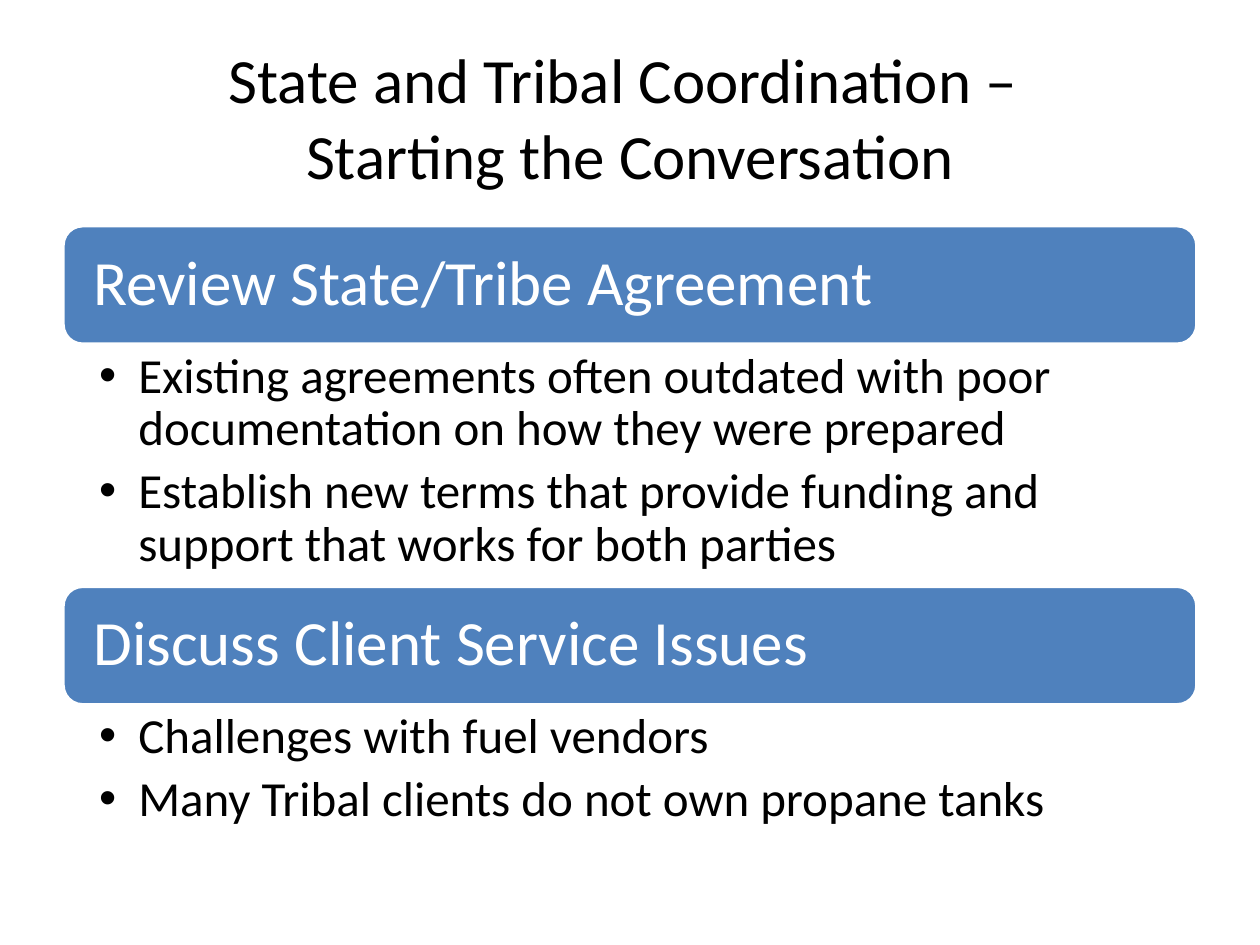
from lxml import etree
from pptx import Presentation
from pptx.dml.color import RGBColor
from pptx.enum import shapes, text
from pptx.oxml import ns
from pptx.util import Cm, Pt

FONT = "Calibri"
BLACK, WHITE, BLUE = "000000", "FFFFFF", "4F81BD"
LEFT, WIDTH = Cm(1.27), Cm(22.86)
BAR_HEIGHT = Cm(2.39)

# Heading, top of its bar, height of its list, list items
SECTIONS = [
    ("Review State/Tribe Agreement", Cm(4.55), Cm(4.88), [
        "Existing agreements often outdated with poor documentation on how they were prepared",
        "Establish new terms that provide funding and support that works for both parties",
    ]),
    ("Discuss Client Service Issues", Cm(11.82), Cm(2.69), [
        "Challenges with fuel vendors",
        "Many Tribal clients do not own propane tanks",
    ]),
]


def color(value):
    return RGBColor.from_string(value)


def format_paragraph(paragraph, size, font_color, alignment):
    paragraph.alignment = alignment
    paragraph.font.name = FONT
    paragraph.font.size = Pt(size)
    paragraph.font.color.rgb = color(font_color)


def set_margins(frame, left, right, vertical):
    frame.margin_left, frame.margin_right = left, right
    frame.margin_top = frame.margin_bottom = vertical


def add_bullet(paragraph):
    """Give the paragraph a hanging bullet."""
    properties = paragraph._p.get_or_add_pPr()
    properties.set("marL", str(Cm(0.79)))
    properties.set("indent", str(-Cm(0.79)))
    etree.SubElement(properties, ns.qn("a:buFont")).set("typeface", "Arial")
    etree.SubElement(properties, ns.qn("a:buChar")).set("char", "•")


def set_title(slide, words):
    title = slide.shapes.title
    title.left, title.top, title.width, title.height = LEFT, Cm(0.76), WIDTH, Cm(3.18)
    frame = title.text_frame
    frame.text = words
    frame.word_wrap = True
    frame.auto_size = text.MSO_AUTO_SIZE.NONE
    frame.vertical_anchor = text.MSO_ANCHOR.MIDDLE
    format_paragraph(frame.paragraphs[0], 36, BLACK, text.PP_ALIGN.CENTER)


def add_heading_bar(slide, words, top):
    bar = slide.shapes.add_shape(
        shapes.MSO_SHAPE.ROUNDED_RECTANGLE, LEFT, top, WIDTH, BAR_HEIGHT)
    bar.shadow.inherit = False
    bar.fill.solid()
    bar.fill.fore_color.rgb = color(BLUE)
    bar.line.color.rgb = color(WHITE)
    bar.line.width = Pt(2)
    frame = bar.text_frame
    frame.text = words
    frame.word_wrap = True
    frame.vertical_anchor = text.MSO_ANCHOR.MIDDLE
    set_margins(frame, Cm(0.5), Cm(0.5), Cm(0.5))
    paragraph = frame.paragraphs[0]
    paragraph.line_spacing = 0.9
    format_paragraph(paragraph, 36, WHITE, text.PP_ALIGN.LEFT)


def add_bullet_list(slide, items, top, height):
    frame = slide.shapes.add_textbox(LEFT, top, WIDTH, height).text_frame
    frame.word_wrap = True
    set_margins(frame, Cm(0.73), Cm(0.71), Cm(0.13))
    frame.text = "\n".join(items)
    for paragraph in frame.paragraphs:
        paragraph.level = 1
        paragraph.line_spacing = 0.9
        paragraph.space_after = Pt(5.6)
        add_bullet(paragraph)
        format_paragraph(paragraph, 28, BLACK, text.PP_ALIGN.LEFT)


def main():
    presentation = Presentation()
    presentation.slide_width, presentation.slide_height = Cm(25.4), Cm(19.05)
    slide = presentation.slides.add_slide(presentation.slide_layouts[5])
    set_title(slide, "State and Tribal Coordination – \vStarting the Conversation")
    for heading, top, list_height, items in SECTIONS:
        add_heading_bar(slide, heading, top)
        add_bullet_list(slide, items, top + BAR_HEIGHT, list_height)
    presentation.save("out.pptx")


if __name__ == "__main__":
    main()
